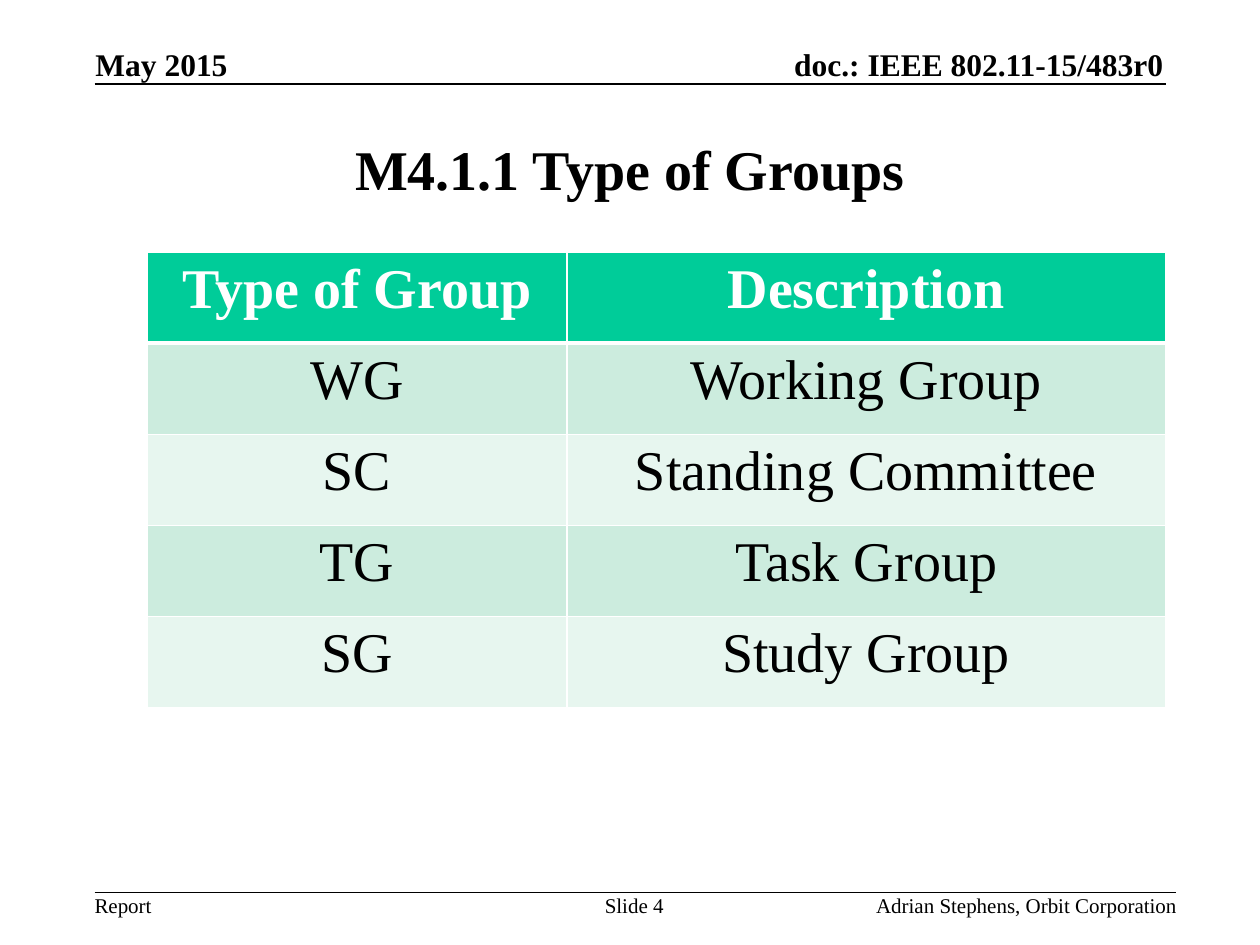
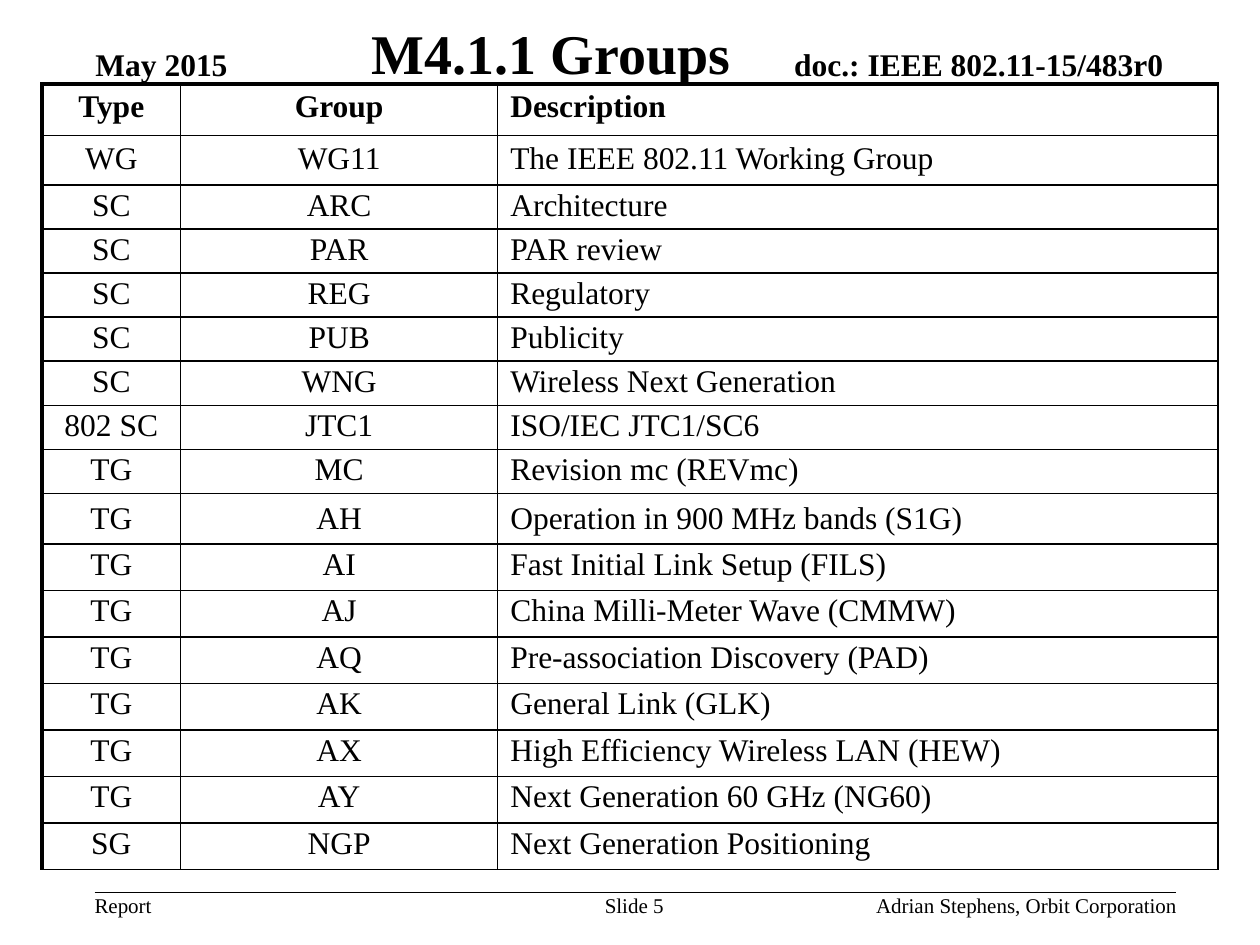
"""Build two slides listing the types of working groups and the groups themselves."""
from lxml.etree import SubElement
from pptx import Presentation
from pptx.dml.color import RGBColor
from pptx.enum.shapes import MSO_CONNECTOR
from pptx.enum.text import MSO_ANCHOR as Anchor, PP_ALIGN as Align
from pptx.oxml import parse_xml
from pptx.oxml.ns import nsdecls, qn
from pptx.util import Inches, Pt

BLACK = RGBColor(0x00, 0x00, 0x00)
WHITE = RGBColor(0xFF, 0xFF, 0xFF)
GREEN = RGBColor(0x00, 0xCC, 0x99)
MINT = RGBColor(0xCC, 0xEC, 0xDE)
PALE_MINT = RGBColor(0xE7, 0xF6, 0xEF)
FONT = "Times New Roman"

deck = Presentation()
deck.slide_width, deck.slide_height = Inches(10), Inches(7.5)
UNIT = deck.slide_width / 120


def write(frame, text, size, align, anchor, bold=False, color=BLACK):
    frame.text = text
    frame.word_wrap = True
    frame.vertical_anchor = anchor
    paragraph = frame.paragraphs[0]
    paragraph.alignment = align
    font = paragraph.runs[0].font
    font.name, font.size, font.bold = FONT, Pt(size), bold
    font.color.rgb = color


def set_borders(cell, color, **widths):
    properties = cell._tc.get_or_add_tcPr()
    for index, side in enumerate("LRTB"):
        border = parse_xml(f'<a:ln{side} {nsdecls("a")} w="{Pt(widths.get(side, 1))}"/>')
        fill = SubElement(border, qn("a:solidFill"))
        SubElement(fill, qn("a:srgbClr"), val=str(color))
        properties.insert(index, border)


HEADER_TEXTS = [
    ("May 2015", 9.1, 30, Align.LEFT),
    ("doc.: IEEE 802.11-15/483r0", 60.8, 50, Align.RIGHT),
]
FOOTER_TEXTS = [
    ("Report", 9, 20, Align.LEFT),
    ("Slide {}", 50.4, 20, Align.CENTER),
    ("Adrian Stephens, Orbit Corporation", 72, 40.1, Align.RIGHT),
]
RULES = [(8, 111), (85, 112)]
TITLES = [
    ("M4.1.1 Type of Groups", 9, 9, 102, 14),
    ("M4.1.1 Groups", 6, 2, 93, 6),
]

slides = []
for number, (title, left, top, width, height) in enumerate(TITLES, start=4):
    slide = deck.slides.add_slide(deck.slide_layouts[6])
    slides.append(slide)
    for y, right in RULES:
        rule = slide.shapes.add_connector(
            MSO_CONNECTOR.STRAIGHT, *(round(v * UNIT) for v in (9, y, right, y)))
        rule.line.color.rgb = BLACK
        rule.line.width = Pt(1)
        SubElement(rule._element.spPr, qn("a:effectLst"))

    bands = [(HEADER_TEXTS, 4.3, 3.6, 18, Anchor.BOTTOM, True),
             (FOOTER_TEXTS, 85, 2.4, 12, Anchor.TOP, False)]
    for texts, y, band_height, size, anchor, bold in bands:
        for text, x, text_width, align in texts:
            label = slide.shapes.add_textbox(
                *(round(v * UNIT) for v in (x, y, text_width, band_height)))
            frame = label.text_frame
            frame.margin_left = frame.margin_right = 0
            frame.margin_top = frame.margin_bottom = 0
            write(frame, text.format(number), size, align, anchor, bold)

    heading = slide.shapes.add_textbox(
        *(round(v * UNIT) for v in (left, top, width, height)))
    write(heading.text_frame, title, 32, Align.CENTER, Anchor.MIDDLE, bold=True)

GROUP_TYPES = [
    ("Type of Group", "Description"),
    ("WG", "Working Group"),
    ("SC", "Standing Committee"),
    ("TG", "Task Group"),
    ("SG", "Study Group"),
]
GROUPS = [
    ("Type", "Group", "Description"),
    ("WG", "WG11", "The IEEE 802.11 Working Group"),
    ("SC", "ARC", "Architecture"),
    ("SC", "PAR", "PAR review"),
    ("SC", "REG", "Regulatory"),
    ("SC", "PUB", "Publicity"),
    ("SC", "WNG", "Wireless Next Generation"),
    ("802 SC", "JTC1", "ISO/IEC JTC1/SC6"),
    ("TG", "MC", "Revision mc (REVmc)"),
    ("TG", "AH", "Operation in 900 MHz bands (S1G)"),
    ("TG", "AI", "Fast Initial Link Setup (FILS)"),
    ("TG", "AJ", "China Milli-Meter Wave (CMMW)"),
    ("TG", "AQ", "Pre-association Discovery (PAD)"),
    ("TG", "AK", "General Link (GLK)"),
    ("TG", "AX", "High Efficiency Wireless LAN (HEW)"),
    ("TG", "AY", "Next Generation 60 GHz (NG60)"),
    ("SG", "NGP", "Next Generation Positioning"),
]
TABLES = [
    (GROUP_TYPES, 14, 24, [40, 57], [8.68] * 5),
    (GROUPS, 4, 8, [13.2, 30.2, 68.6],
     [4.9, 4.5] + [4.05] * 7 + [4.8] + [4.43] * 7),
]

tables = []
for slide, (rows, left, top, widths, heights) in zip(slides, TABLES):
    table = slide.shapes.add_table(
        len(rows), len(widths),
        *(round(v * UNIT) for v in (left, top, sum(widths), sum(heights)))).table
    table.first_row = table.horz_banding = False
    for column, width in zip(table.columns, widths):
        column.width = round(width * UNIT)
    for row, height in zip(table.rows, heights):
        row.height = round(height * UNIT)
    tables.append(table)

type_table, group_table = tables
for r, texts in enumerate(GROUP_TYPES):
    for c, text in enumerate(texts):
        cell = type_table.cell(r, c)
        is_header = r == 0
        write(cell.text_frame, text, 32, Align.CENTER, Anchor.TOP,
              is_header, WHITE if is_header else BLACK)
        cell.fill.solid()
        cell.fill.fore_color.rgb = GREEN if is_header else MINT if r % 2 else PALE_MINT
        set_borders(cell, WHITE, T=3 if r == 1 else 1, B=3 if is_header else 1)

for r, texts in enumerate(GROUPS):
    for c, text in enumerate(texts):
        cell = group_table.cell(r, c)
        write(cell.text_frame, text, 18, Align.LEFT if c == 2 else Align.CENTER,
              Anchor.TOP, bold=r == 0)
        cell.vertical_anchor = Anchor.MIDDLE if texts[1] == "AH" else Anchor.TOP
        cell.margin_top = cell.margin_bottom = Pt(3.3 if r < 2 else 1.8)
        cell.fill.background()
        set_borders(cell, BLACK, L=1 if c else 2.25, T=1 if r else 2.25)

deck.save("out.pptx")
